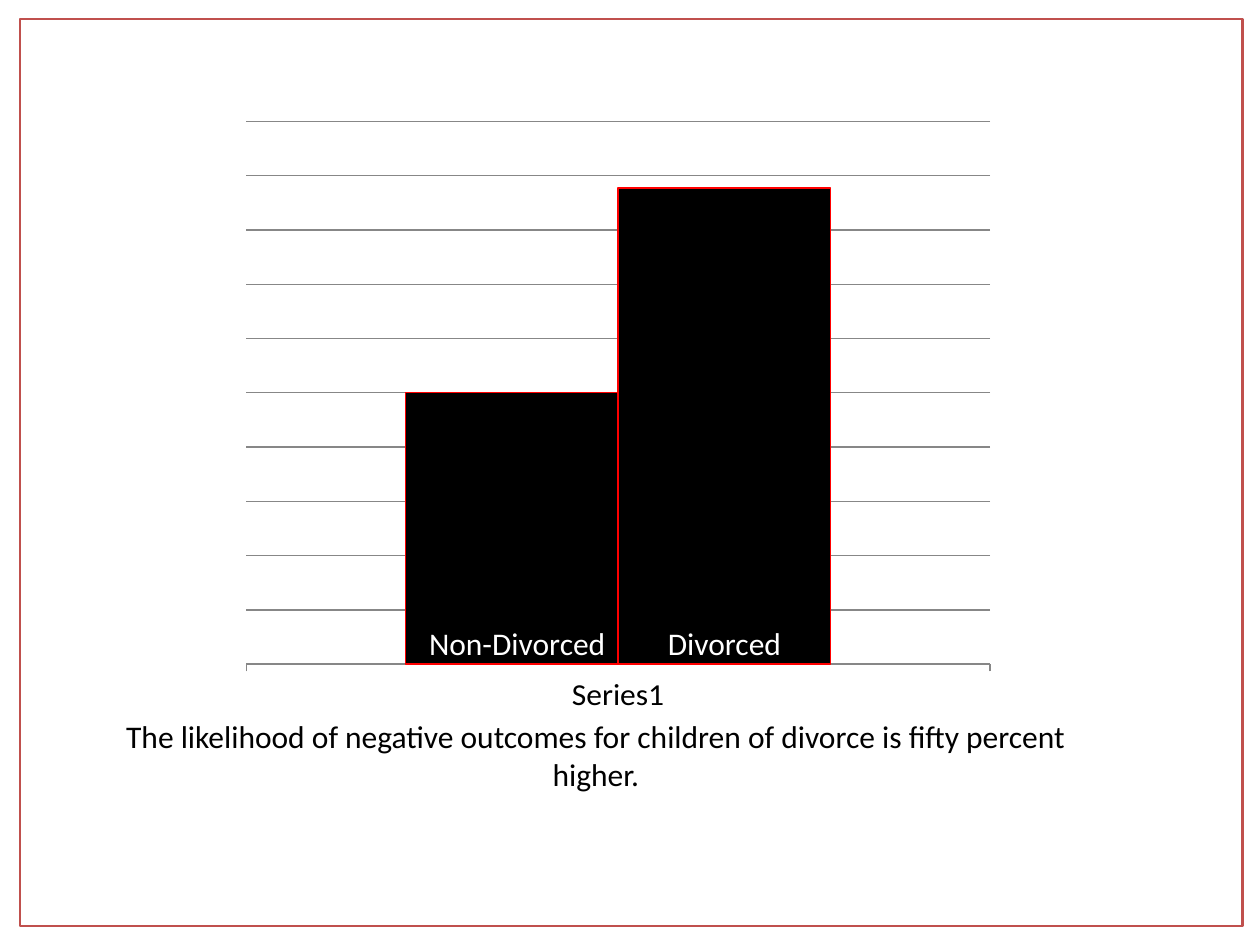
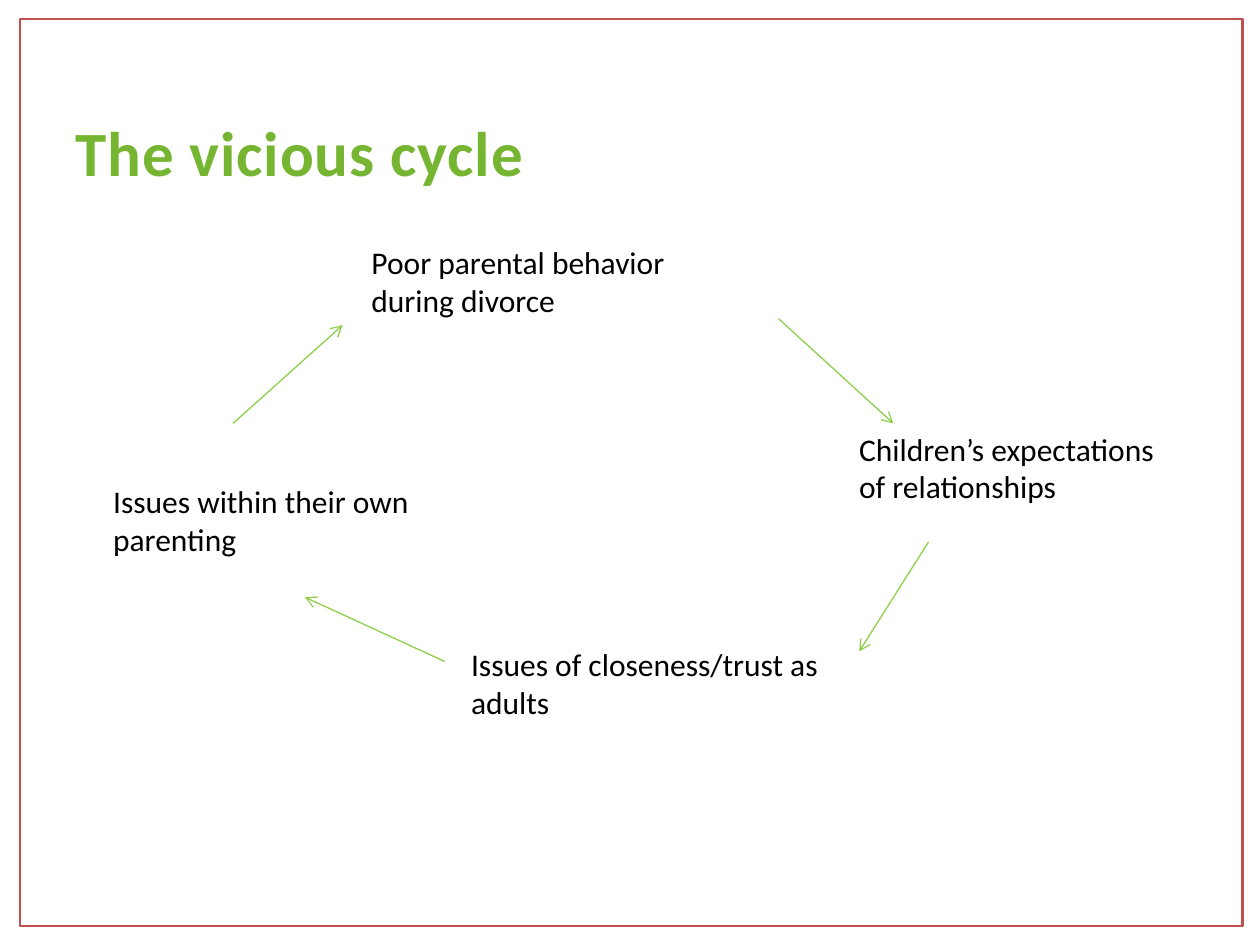
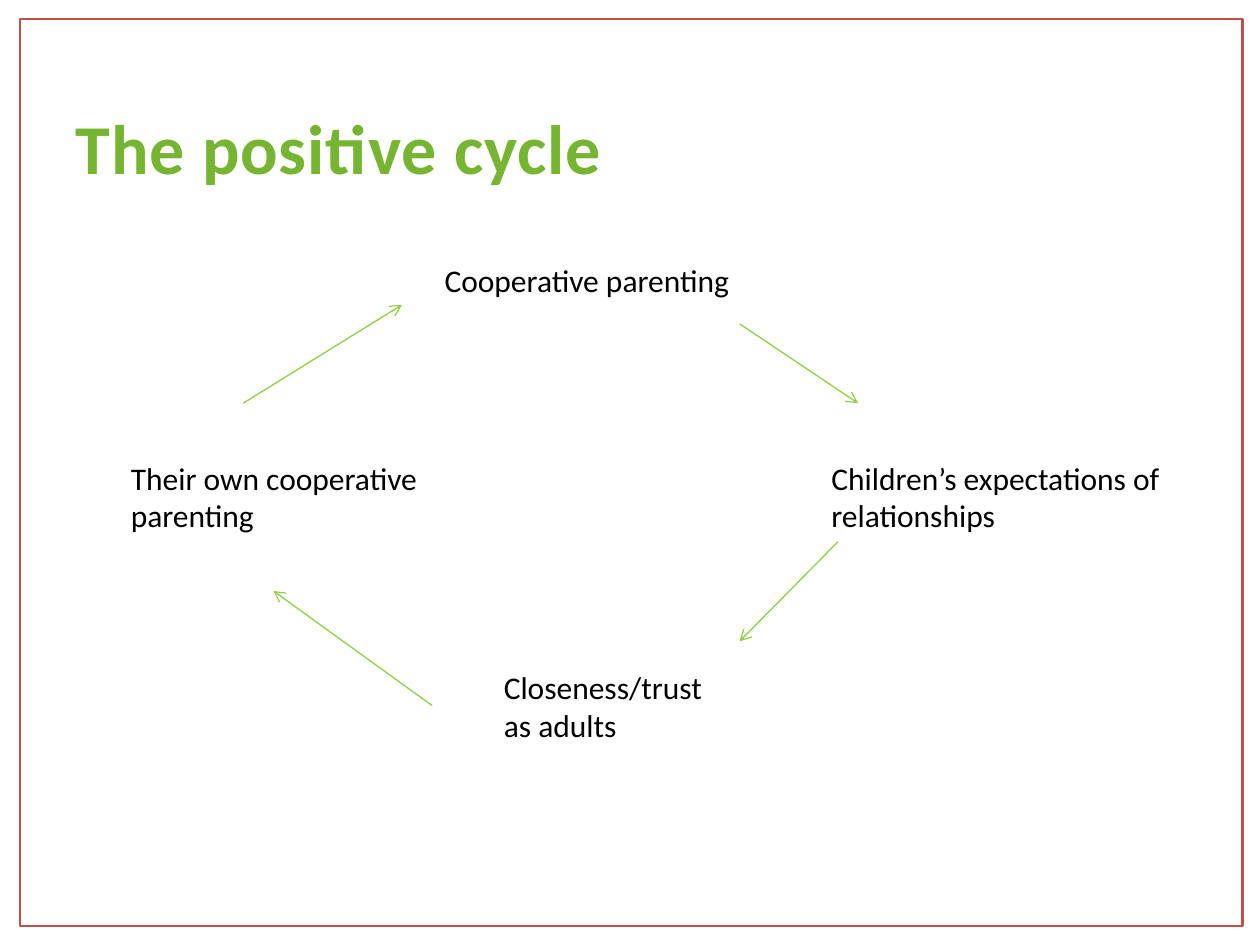
"""Build three slides on outcomes of divorce and two parenting cycles."""
from lxml import etree
from pptx import Presentation
from pptx import util as u
from pptx.chart.data import CategoryChartData
from pptx.dml.color import RGBColor
from pptx.enum import chart as charts, shapes, text
from pptx.oxml import parse_xml
from pptx.oxml.ns import nsdecls, qn


def paint(color_format, color):
    """Set a fill's or a font's colour from a hex string."""
    color_format.rgb = RGBColor.from_string(color)


def write(frame, words, size=18, color="000000", font="Calibri", bold=False,
          align=text.PP_ALIGN.LEFT):
    """Write one paragraph into a text frame and return its run."""
    paragraph = frame.paragraphs[0]
    paragraph.alignment = align
    run = paragraph.add_run()
    run.text = words
    run.font.size, run.font.name, run.font.bold = u.Pt(size), font, bold
    paint(run.font.color, color)
    return run


def stroke(line, color, width):
    """Give a line a solid colour and a width in points."""
    line.fill.solid()
    paint(line.fill.fore_color, color)
    line.width = u.Pt(width)


class Deck:
    """Hold the shared style and the current slide."""

    FRAME, TITLE, TITLE_EDGE = "C0504D", "76B531", "49721E"
    ARROW, GRID, BAR, BAR_EDGE = "8FCF4B", "878787", "000000", "FF0000"
    TITLE_ONLY, BLANK = 5, 6

    def __init__(self):
        """Start a 4:3 presentation."""
        self.presentation = Presentation()
        self.presentation.slide_width = u.Inches(10)
        self.presentation.slide_height = u.Inches(7.5)
        self.slide = None

    def add_slide(self, title=None, size=36):
        """Add a framed slide, with a title when one is given."""
        layout = self.BLANK if title is None else self.TITLE_ONLY
        self.slide = self.presentation.slides.add_slide(
            self.presentation.slide_layouts[layout])
        frame = self.slide.shapes.add_shape(
            shapes.MSO_SHAPE.RECTANGLE, *map(u.Inches, (0.16, 0.15, 9.7, 7.2)))
        frame.shadow.inherit = False
        frame.fill.background()
        stroke(frame.line, self.FRAME, 1.5)
        if title is not None:
            self.format_title(title, size)

    def format_title(self, words, size):
        """Place the title and write it with spaced, outlined letters."""
        title = self.slide.shapes.title
        title.left, title.top, title.width, title.height = map(
            u.Inches, (0.5, 0.3, 9, 1.25))
        title.text_frame.auto_size = text.MSO_AUTO_SIZE.NONE
        title.text_frame.vertical_anchor = text.MSO_ANCHOR.BOTTOM
        run = write(title.text_frame, words, size=size, color=self.TITLE, bold=True)
        properties = run.font._element
        properties.set("spc", "50")
        properties.insert(0, parse_xml(
            f'<a:ln {nsdecls("a")} w="{u.Pt(1.05)}"><a:solidFill>'
            f'<a:srgbClr val="{self.TITLE_EDGE}"/></a:solidFill></a:ln>'))

    def add_text(self, words, left, top, width, height=0.71, **style):
        """Add a wrapping text box."""
        box = self.slide.shapes.add_textbox(
            *map(u.Inches, (left, top, width, height)))
        box.text_frame.word_wrap = True
        box.text_frame.auto_size = text.MSO_AUTO_SIZE.SHAPE_TO_FIT_TEXT
        write(box.text_frame, words, **style)

    def add_arrow(self, start, end):
        """Draw a thin arrow from start to end."""
        arrow = self.slide.shapes.add_connector(
            shapes.MSO_CONNECTOR.STRAIGHT, *map(u.Inches, start + end))
        stroke(arrow.line, self.ARROW, 0.75)
        etree.SubElement(arrow.line._get_or_add_ln(), qn("a:tailEnd"), type="arrow")
        etree.SubElement(arrow._element.spPr, qn("a:effectLst"))

    def add_cycle(self, steps, arrows):
        """Add the steps of a cycle and the arrows between them."""
        for step in steps:
            self.add_text(*step)
        for start, end in arrows:
            self.add_arrow(start, end)

    def add_column_chart(self, category, values, top_value, place, plot):
        """Add a clustered column chart with one column per series."""
        data = CategoryChartData()
        data.categories = [category]
        for name, value in values.items():
            data.add_series(name, [value])
        chart = self.slide.shapes.add_chart(
            charts.XL_CHART_TYPE.COLUMN_CLUSTERED, *map(u.Inches, place), data).chart
        chart.has_legend = chart.has_title = False
        chart.font.size, chart.font.name = u.Pt(18), "Calibri"
        paint(chart.font.color, "000000")

        value_axis, category_axis = chart.value_axis, chart.category_axis
        value_axis.minimum_scale, value_axis.maximum_scale = 0, top_value
        value_axis.major_unit = top_value / 10
        value_axis.visible = False
        value_axis.has_major_gridlines = True
        stroke(value_axis.major_gridlines.format.line, self.GRID, 0.75)
        stroke(category_axis.format.line, self.GRID, 0.75)
        category_axis.major_tick_mark = charts.XL_TICK_MARK.OUTSIDE

        columns = chart.plots[0]
        columns.gap_width, columns.overlap = 150, 0
        columns.vary_by_categories = False
        for series in columns.series:
            series.format.fill.solid()
            paint(series.format.fill.fore_color, self.BAR)
            stroke(series.format.line, self.BAR_EDGE, 0.75)
        self.place_plot(chart, plot)

    def place_plot(self, chart, plot):
        """Fix the inner plot area as fractions of the chart."""
        area = chart._chartSpace.chart.plotArea
        for layout in area.findall(qn("c:layout")):
            area.remove(layout)
        settings = [("layoutTarget", "inner"), ("xMode", "edge"), ("yMode", "edge")]
        settings += zip("xywh", plot)
        marks = "".join(f'<c:{tag} val="{value}"/>' for tag, value in settings)
        area.insert(0, parse_xml(
            f'<c:layout {nsdecls("c")}><c:manualLayout>{marks}'
            '</c:manualLayout></c:layout>'))


def main():
    """Build and save the three slides."""
    deck = Deck()
    center = text.PP_ALIGN.CENTER

    deck.add_slide()
    deck.add_column_chart("Series1", {"Series 1": 57, "Series 2": 100}, 114,
                          (1, 0.71, 9, 4.95), (0.106, 0.053, 0.656, 0.898))
    deck.add_text("The likelihood of negative outcomes for children of divorce "
                  "is fifty percent higher.", 0.83, 5.64, 7.8, align=center)
    for label, left, width in (("Divorced", 5, 1.5), ("Non-Divorced", 3.24, 1.73)):
        deck.add_text(label, left, 4.9, width, 0.4, color="FFFFFF", align=center)

    deck.add_slide("The vicious cycle")
    deck.add_cycle(
        [("Poor parental behavior during divorce", 2.85, 1.88, 3.23),
         ("Children’s expectations of relationships", 6.72, 3.36, 2.6),
         ("Issues of closeness/trust as adults", 3.64, 5.07, 2.99),
         ("Issues within their own parenting", 0.8, 3.78, 2.74)],
        [((6.18, 2.53), (7.09, 3.36)), ((7.37, 4.3), (6.82, 5.17)),
         ((3.53, 5.25), (2.42, 4.74)), ((1.85, 3.36), (2.72, 2.58))])

    deck.add_slide("The positive cycle", size=40)
    deck.add_cycle(
        [("Cooperative parenting", 3.43, 2.02, 3.7, 0.4),
         ("Children’s expectations of relationships", 6.5, 3.59, 2.99),
         ("Closeness/trust as adults", 3.9, 5.25, 1.97),
         ("Their own cooperative parenting", 0.94, 3.59, 3.23)],
        [((5.87, 2.57), (6.81, 3.2)), ((6.65, 4.3), (5.87, 5.09)),
         ((3.43, 5.6), (2.17, 4.69)), ((1.93, 3.2), (3.19, 2.42))])

    deck.presentation.save("out.pptx")


if __name__ == "__main__":
    main()
